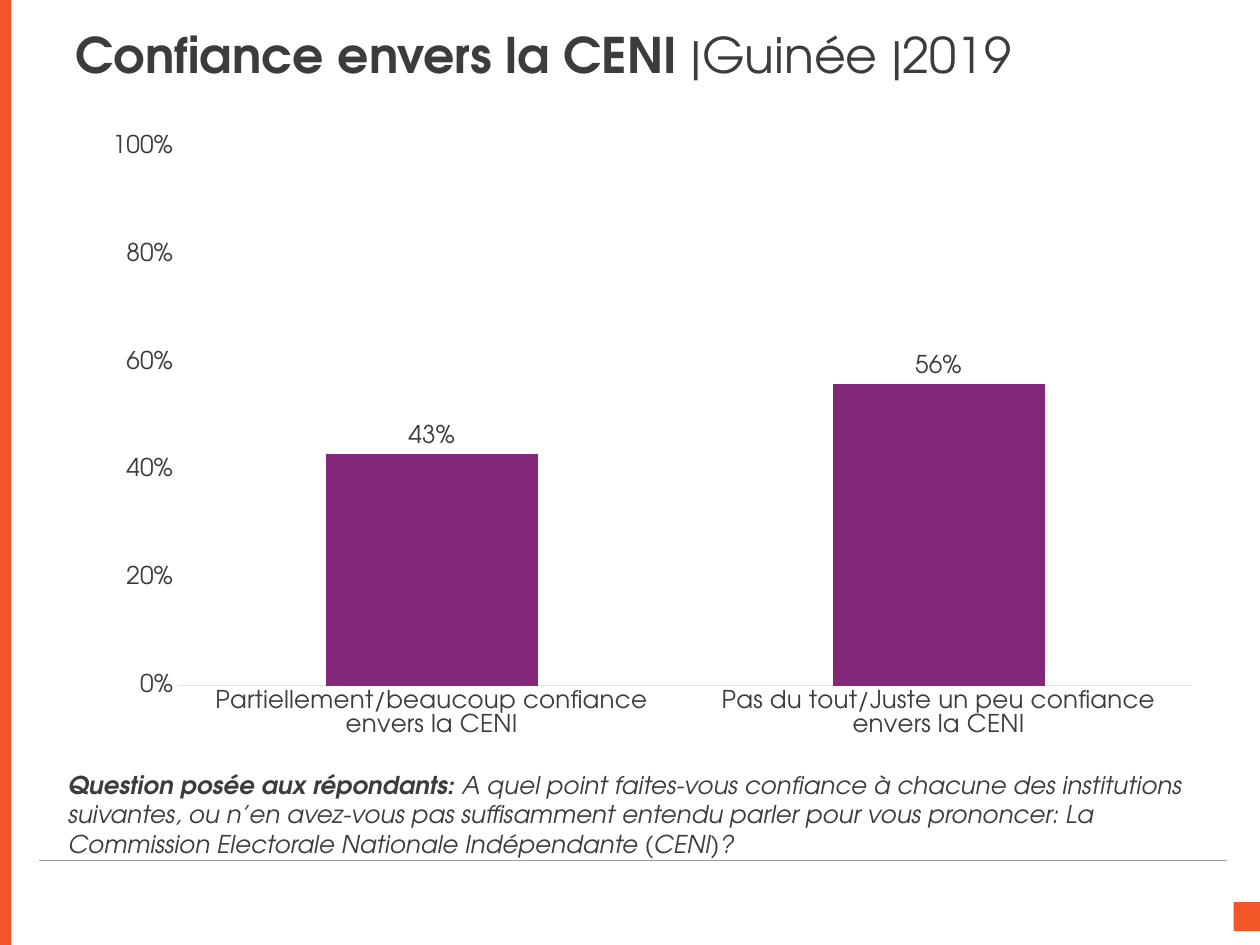
from dataclasses import dataclass

from lxml.etree import SubElement
from pptx import Presentation
from pptx.chart.data import CategoryChartData
from pptx.dml.color import RGBColor
from pptx.enum.chart import XL_CHART_TYPE, XL_LABEL_POSITION, XL_TICK_MARK
from pptx.enum.shapes import MSO_CONNECTOR, MSO_SHAPE
from pptx.enum.text import MSO_ANCHOR, MSO_AUTO_SIZE, PP_ALIGN
from pptx.oxml import parse_xml
from pptx.oxml.ns import nsdecls, qn
from pptx.util import Inches, Pt

COLS, ROWS = 100, 75
COLORS = {"accent": "F25528", "bar": "83277A", "text": "3C3C3C",
          "rule": "9E9E9E", "axis": "E2E2E2"}
FONT = "TeX Gyre Adventor"

prs = Presentation()
prs.slide_width, prs.slide_height = Inches(10), Inches(7.5)


@dataclass
class Box:
    col: float
    row: float
    cols: float
    rows: float

    def frame(self) -> dict:
        w, h = prs.slide_width / COLS, prs.slide_height / ROWS
        return {"left": round(self.col * w), "top": round(self.row * h),
                "width": round(self.cols * w), "height": round(self.rows * h)}


@dataclass
class Run:
    text: str
    fmt: dict


def apply(obj, fmt: dict) -> None:
    for name, value in fmt.items():
        setattr(obj, name, value)


def rgb(name: str) -> RGBColor:
    return RGBColor.from_string(COLORS[name])


def style_font(font, fmt: dict) -> None:
    apply(font, {"name": FONT, **fmt})
    font.color.rgb = rgb("text")


def fill(fmt, color: str) -> None:
    fmt.fill.solid()
    fmt.fill.fore_color.rgb = rgb(color)


def add_block(s, box: Box) -> None:
    sp = s.shapes.add_shape(MSO_SHAPE.RECTANGLE, **box.frame())
    sp.shadow.inherit = False
    fill(sp, "accent")
    sp.line.fill.background()


def add_rule(s, box: Box) -> None:
    f = box.frame()
    line = s.shapes.add_connector(MSO_CONNECTOR.STRAIGHT, f["left"] + f["width"],
                                  f["top"], f["left"], f["top"])
    line.line.width = Pt(0.25)
    line.line.color.rgb = rgb("rule")
    SubElement(line.element.spPr, qn("a:effectLst"))


def fill_placeholder(sp, box: Box, anchor: MSO_ANCHOR, runs: list[Run]) -> None:
    apply(sp, box.frame())
    tf = sp.text_frame
    apply(tf, {"word_wrap": True, "auto_size": MSO_AUTO_SIZE.NONE,
               "vertical_anchor": anchor})
    p = tf.paragraphs[0]
    pPr = p._p.get_or_add_pPr()
    pPr.set("marL", "0")
    pPr.set("indent", "0")
    SubElement(pPr, qn("a:buNone"))
    apply(p, {"alignment": PP_ALIGN.LEFT, "space_before": Pt(0)})
    for run in runs:
        r = p.add_run()
        r.text = run.text
        style_font(r.font, run.fmt)


def set_plot_area(chart, shares: dict) -> None:
    area = chart.element.chart.plotArea
    for old in area.findall(qn("c:layout")):
        area.remove(old)
    values = {"layoutTarget": "inner", "xMode": "edge", "yMode": "edge", **shares}
    items = "".join(f'<c:{k} val="{v}"/>' for k, v in values.items())
    area.insert(0, parse_xml(f'<c:layout {nsdecls("c")}><c:manualLayout>{items}'
                             '</c:manualLayout></c:layout>'))


def add_bars(s, box: Box, values: dict[str, float]) -> None:
    data = CategoryChartData(number_format="0%")
    data.categories = list(values)
    data.add_series("Series 1", list(values.values()))
    chart = s.shapes.add_chart(XL_CHART_TYPE.COLUMN_CLUSTERED,
                               *box.frame().values(), data).chart
    apply(chart, {"has_legend": False, "has_title": False})
    style_font(chart.font, {"size": Pt(14)})
    set_plot_area(chart, {"x": 0.08, "y": 0.04, "w": 0.9, "h": 0.86})

    plot = chart.plots[0]
    apply(plot, {"gap_width": 139, "overlap": -27, "vary_by_categories": False,
                 "has_data_labels": True})
    labels = plot.data_labels
    apply(labels, {"show_value": True, "number_format": "0%",
                   "number_format_is_linked": False,
                   "position": XL_LABEL_POSITION.OUTSIDE_END})
    series = plot.series[0]
    fill(series.format, "accent")
    for i in range(len(values)):
        fill(series.points[i].format, "bar")

    cat, val = chart.category_axis, chart.value_axis
    apply(val, {"minimum_scale": 0, "maximum_scale": 1, "major_unit": 0.2})
    apply(val.tick_labels, {"number_format": "0%", "number_format_is_linked": False})
    for axis in (cat, val):
        apply(axis, {"has_major_gridlines": False,
                     "major_tick_mark": XL_TICK_MARK.NONE,
                     "minor_tick_mark": XL_TICK_MARK.NONE})
    for part in (cat.tick_labels, val.tick_labels, labels):
        style_font(part.font, {"size": Pt(14)})
    val.format.line.fill.background()
    cat.format.line.width = Pt(0.75)
    cat.format.line.color.rgb = rgb("axis")


def main() -> None:
    s = prs.slides.add_slide(prs.slide_layouts[1])
    add_block(s, Box(97.9, 71.6, 2.2, 2.3))
    add_rule(s, Box(3.1, 68.3, 94.3, 0))
    add_block(s, Box(0, 0, 0.9, ROWS))

    title = {"size": Pt(28)}
    fill_placeholder(s.shapes.title, Box(5, 2, 92.2, 4.6), MSO_ANCHOR.MIDDLE, [
        Run("Confiance envers la CENI ", {**title, "bold": True}),
        Run("|Guinée |2019", {**title, "bold": False}),
    ])
    note = {"size": Pt(14), "italic": True}
    fill_placeholder(s.placeholders[1], Box(4.4, 60.6, 90.6, 6.9), MSO_ANCHOR.TOP, [
        Run("Question posée aux répondants: ", {**note, "bold": True}),
        Run("A quel point faites-vous confiance à chacune des institutions "
            "suivantes, ou n’en avez-vous pas suffisamment entendu parler pour "
            "vous prononcer: La Commission Electorale Nationale Indépendante "
            "(CENI)?", {**note, "bold": False}),
    ])
    add_bars(s, Box(7, 9.7, 89.4, 49.7), {
        "Partiellement/beaucoup confiance envers la CENI": 0.43,
        "Pas du tout/Juste un peu confiance envers la CENI": 0.56,
    })
    prs.save("out.pptx")


if __name__ == "__main__":
    main()
